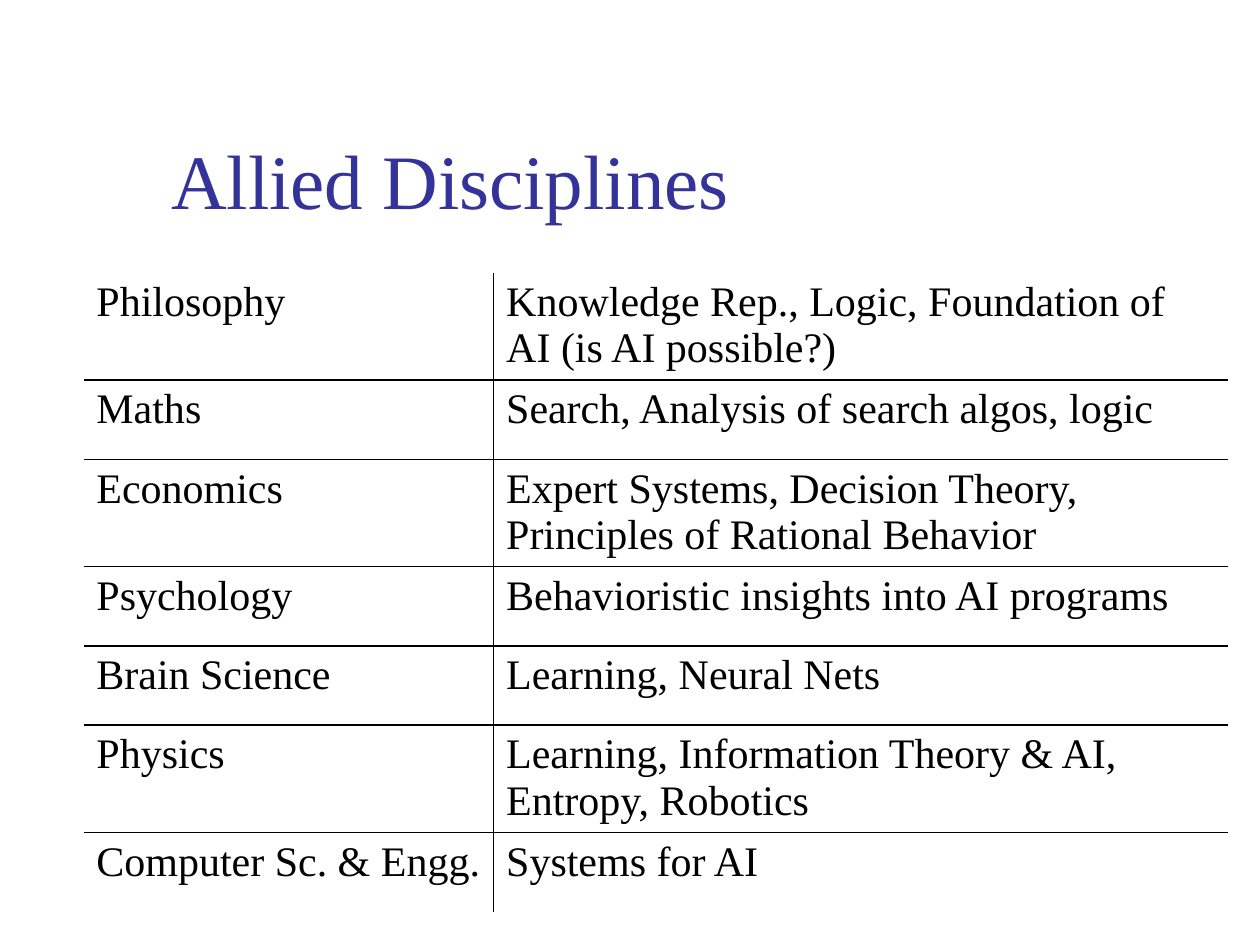
"""Build the Allied Disciplines slide with its two-column table."""
from lxml.etree import SubElement
from pptx import Presentation
from pptx.dml.color import RGBColor
from pptx.enum.text import MSO_ANCHOR as Anchor
from pptx.oxml.ns import qn
from pptx.util import Cm, Pt

BLUE = RGBColor(0x33, 0x33, 0x99)
BLACK = RGBColor(0, 0, 0)
FONT = "Times New Roman"
ROWS = [
    ("Philosophy", "Knowledge Rep., Logic, Foundation of AI (is AI possible?)"),
    ("Maths", "Search, Analysis of search algos, logic"),
    ("Economics", "Expert Systems, Decision Theory, Principles of Rational Behavior"),
    ("Psychology", "Behavioristic insights into AI programs"),
    ("Brain Science", "Learning, Neural Nets"),
    ("Physics", "Learning, Information Theory & AI, Entropy, Robotics"),
    ("Computer Sc. & Engg.", "Systems for AI"),
]


def style(frame, size, color):
    for run in frame.paragraphs[0].runs:
        run.font.name = FONT
        run.font.size = Pt(size)
        run.font.color.rgb = color


def border(cell, side, shown):
    line = SubElement(cell._tc.get_or_add_tcPr(), qn(f"a:ln{side}"), w=str(Pt(1)))
    if shown:
        fill = SubElement(line, qn("a:solidFill"))
        SubElement(fill, qn("a:srgbClr"), val=str(BLACK))
    else:
        SubElement(line, qn("a:noFill"))


deck = Presentation()
deck.slide_width, deck.slide_height = Cm(25.4), Cm(19.05)
slide = deck.slides.add_slide(deck.slide_layouts[6])

title = slide.shapes.add_textbox(Cm(3.2), Cm(0.6), Cm(21.64), Cm(4.06)).text_frame
title.word_wrap = True
title.vertical_anchor = Anchor.BOTTOM
title.text = "Allied Disciplines"
style(title, 44, BLUE)

last = len(ROWS) - 1
table = slide.shapes.add_table(
    len(ROWS), 2, Cm(1.69), Cm(5.5), Cm(23.07), Cm(11.2)).table
table.first_row = table.horz_banding = False
table.columns[0].width, table.columns[1].width = Cm(8.26), Cm(14.81)

for r, texts in enumerate(ROWS):
    table.rows[r].height = Cm(1.6)
    for c, text in enumerate(texts):
        cell = table.cell(r, c)
        cell.margin_bottom = Cm(0)
        cell.text_frame.text = text
        style(cell.text_frame, 24, BLACK)
        inner = {"L": c > 0, "R": c < 1, "T": r > 0, "B": r < last}
        for side, shown in inner.items():
            border(cell, side, shown)
        cell.fill.background()

deck.save("out.pptx")
